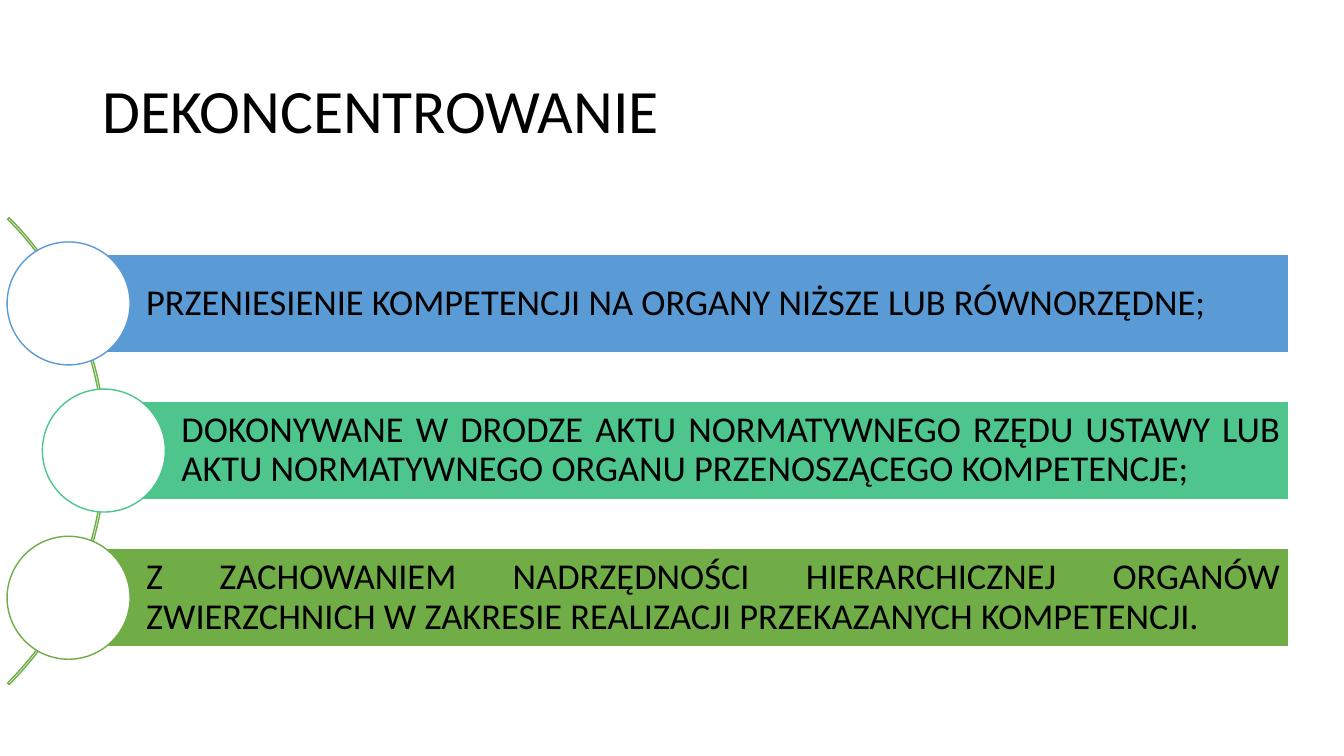
from pptx import Presentation
from pptx import util as u
from pptx.dml.color import RGBColor
from pptx.enum import shapes, text

COLORS = {"black": "000000", "white": "FFFFFF", "blue": "5B9BD5",
          "teal": "4DC58D", "green": "70AD47"}
TITLE = "DEKONCENTROWANIE"
LEFT, JUSTIFIED = text.PP_ALIGN.LEFT, text.PP_ALIGN.JUSTIFY
BARS = [
    ("PRZENIESIENIE KOMPETENCJI NA ORGANY NIŻSZE LUB RÓWNORZĘDNE;",
     "blue", 0.68, LEFT),
    ("DOKONYWANE W DRODZE AKTU NORMATYWNEGO RZĘDU USTAWY LUB AKTU "
     "NORMATYWNEGO ORGANU PRZENOSZĄCEGO KOMPETENCJE;",
     "teal", 1.03, JUSTIFIED),
    ("Z ZACHOWANIEM NADRZĘDNOŚCI HIERARCHICZNEJ ORGANÓW ZWIERZCHNICH "
     "W ZAKRESIE REALIZACJI PRZEKAZANYCH KOMPETENCJI.",
     "green", 0.68, JUSTIFIED),
]
BAR_RIGHT, BAR_HEIGHT, FIRST_CENTER, PITCH = 12.78, 0.97, 3.01, 1.46
CIRCLE = 1.22
BAR_MARGINS = {"margin_left": 0.77, "margin_right": 0.07,
               "margin_top": 0.07, "margin_bottom": 0.07}
TITLE_MARGINS = {"margin_left": 0.1, "margin_right": 0.1,
                 "margin_top": 0.05, "margin_bottom": 0.05}


def color(name):
    return RGBColor.from_string(COLORS[name])


def add_figure(page, kind, place, fill, line):
    figure = page.shapes.add_shape(kind, *map(u.Inches, place))
    figure.shadow.inherit = False
    if fill:
        figure.fill.solid()
        figure.fill.fore_color.rgb = color(fill)
    else:
        figure.fill.background()
    figure.line.color.rgb = color(line)
    figure.line.width = u.Pt(1)
    return figure


def write(box, words, size, align, margins):
    frame = box.text_frame
    frame.word_wrap = True
    frame.vertical_anchor = text.MSO_ANCHOR.MIDDLE
    for side, inches in margins.items():
        setattr(frame, side, u.Inches(inches))
    para = frame.paragraphs[0]
    para.alignment = align
    para.line_spacing = 0.9
    span = para.add_run()
    span.text = words
    for name, value in {"name": "Calibri", "size": u.Pt(size)}.items():
        setattr(span.font, name, value)
    span.font.color.rgb = color("black")


def main():
    deck = Presentation()
    deck.slide_width, deck.slide_height = u.Inches(13.33), u.Inches(7.5)
    page = deck.slides.add_slide(deck.slide_layouts[6])

    title = page.shapes.add_textbox(*map(u.Inches, (0.92, 0.4, 11.5, 1.45)))
    write(title, TITLE, 44, LEFT, TITLE_MARGINS)

    arc = add_figure(page, shapes.MSO_SHAPE.BLOCK_ARC,
                     (-5.5, 1.2, 6.55, 6.55), None, "green")
    for index, value in enumerate((189, 27, 0.0033)):
        arc.adjustments[index] = value

    for index, (words, hue, left, align) in enumerate(BARS):
        center = FIRST_CENTER + index * PITCH
        bar = add_figure(page, shapes.MSO_SHAPE.RECTANGLE,
                         (left, center - BAR_HEIGHT / 2,
                          BAR_RIGHT - left, BAR_HEIGHT), hue, "white")
        write(bar, words, 26, align, BAR_MARGINS)
        add_figure(page, shapes.MSO_SHAPE.OVAL,
                   (left - CIRCLE / 2, center - CIRCLE / 2, CIRCLE, CIRCLE),
                   "white", hue)

    deck.save("out.pptx")


if __name__ == "__main__":
    main()
